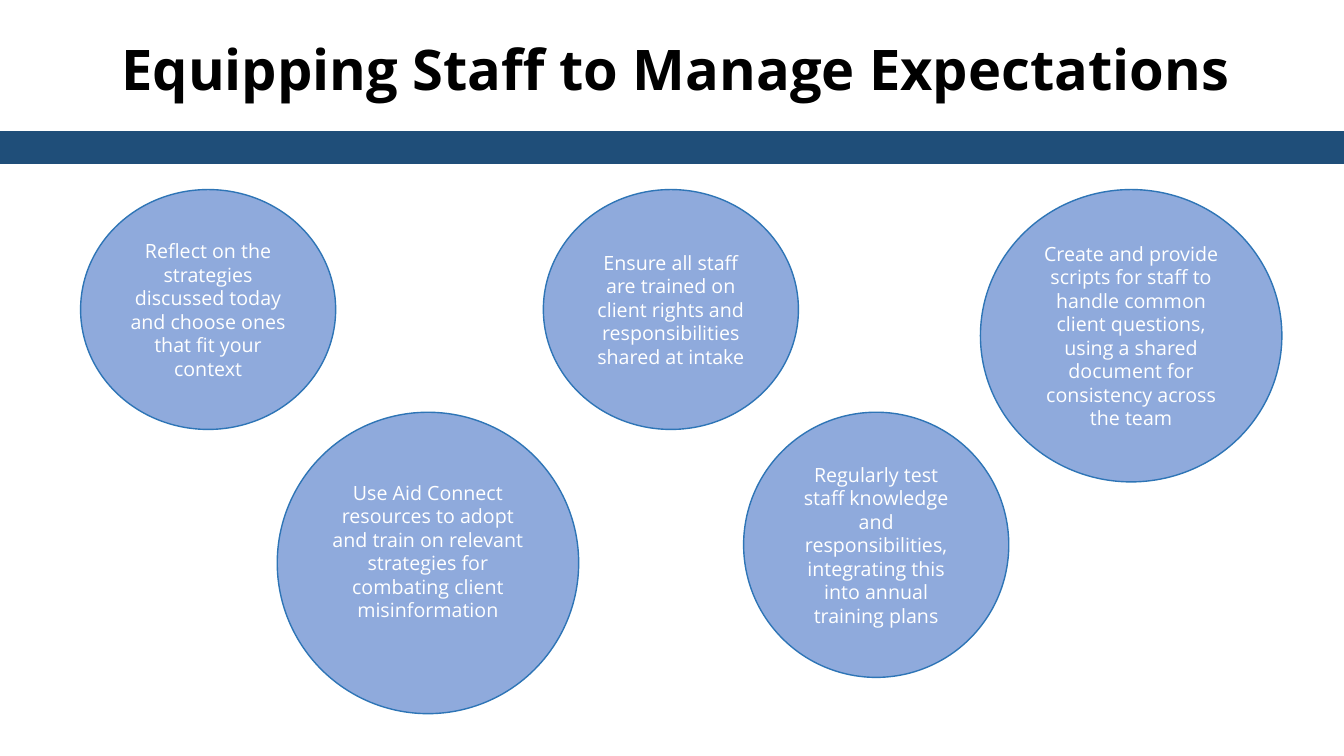
from dataclasses import dataclass

import pptx
import pptx.dml.color
import pptx.enum.shapes
import pptx.enum.text
import pptx.util

SHAPE = pptx.enum.shapes.MSO_SHAPE
MIDDLE = pptx.enum.text.MSO_ANCHOR.MIDDLE
CENTER = pptx.enum.text.PP_ALIGN.CENTER


@dataclass(frozen=True)
class Theme:
    font: str = "Open Sans"
    title_size: int = 40
    body_size: int = 14
    title_color: str = "000000"
    body_color: str = "FFFFFF"
    band: str = "1F4E79"
    bubble: str = "8FAADC"
    bubble_line: str = "2E75B6"
    line_width: int = 1


class SlideBuilder:
    """Places elements on a grid of 100 columns by 100 rows."""

    def __init__(self, deck, theme):
        self.theme = theme
        self.column = deck.slide_width / 100
        self.row = deck.slide_height / 100
        self.page = deck.slides.add_slide(deck.slide_layouts[5])

    def area(self, left, top, width, height):
        return (round(left * self.column), round(top * self.row),
                round(width * self.column), round(height * self.row))

    def set_text(self, frame, text, size, color, bold=False):
        frame.word_wrap = True
        frame.auto_size = pptx.enum.text.MSO_AUTO_SIZE.NONE
        frame.vertical_anchor = MIDDLE
        para = frame.paragraphs[0]
        para.text = text
        para.alignment = CENTER
        para.font.name = self.theme.font
        para.font.size = pptx.util.Pt(size)
        para.font.bold = bold
        para.font.color.rgb = pptx.dml.color.RGBColor.from_string(color)

    def title(self, text, left, top, width, height):
        box = self.page.shapes.title
        box.left, box.top, box.width, box.height = self.area(left, top, width, height)
        self.set_text(box.text_frame, text, self.theme.title_size,
                      self.theme.title_color, bold=True)

    def shape(self, kind, fill, line, *place):
        shape = self.page.shapes.add_shape(kind, *self.area(*place))
        shape.shadow.inherit = False
        shape.fill.solid()
        shape.fill.fore_color.rgb = pptx.dml.color.RGBColor.from_string(fill)
        shape.line.color.rgb = pptx.dml.color.RGBColor.from_string(line)
        shape.line.width = pptx.util.Pt(self.theme.line_width)
        return shape

    def band(self, top, height):
        self.shape(SHAPE.RECTANGLE, self.theme.band, self.theme.band,
                   0, top, 100, height)

    def bubble(self, text, left, top, width, height, lift=0):
        """Draws an ellipse with text; lift is extra bottom margin in rows."""
        bubble = self.shape(SHAPE.OVAL, self.theme.bubble, self.theme.bubble_line,
                            left, top, width, height)
        frame = bubble.text_frame
        frame.margin_bottom = round(frame.margin_bottom + lift * self.row)
        self.set_text(frame, text, self.theme.body_size, self.theme.body_color)


UPPER, LOWER = 25.07, 54.53
SMALL = (18.98, 31.73)
MEDIUM = (19.73, 35.07)
LARGE = (22.43, 39.87)
WIDE = (22.43, 38.67)

BUBBLES = [
    ("Use Aid Connect resources to adopt and train on relevant strategies "
     "for combating client misinformation", 20.63, LOWER, LARGE, 3.1),
    ("Ensure all staff are trained on client rights and responsibilities "
     "shared at intake", 40.43, UPPER, SMALL, 0),
    ("Regularly test staff knowledge and responsibilities, integrating this "
     "into annual training plans", 55.33, LOWER, MEDIUM, 0),
    ("Create and provide scripts for staff to handle common client questions, "
     "using a shared document for consistency across the team",
     72.95, UPPER, WIDE, 0),
    ("Reflect on the strategies discussed today and choose ones that fit "
     "your context", 6, UPPER, SMALL, 0),
]


def main():
    deck = pptx.Presentation()
    deck.slide_width = pptx.util.Inches(13.33)
    deck.slide_height = pptx.util.Inches(7.5)
    builder = SlideBuilder(deck, Theme())
    builder.title("Equipping Staff to Manage Expectations", 4.36, 3.87, 91.75, 10.27)
    builder.band(17.47, 4.13)
    for text, left, top, size, lift in BUBBLES:
        builder.bubble(text, left, top, *size, lift=lift)
    deck.save("out.pptx")


if __name__ == "__main__":
    main()
